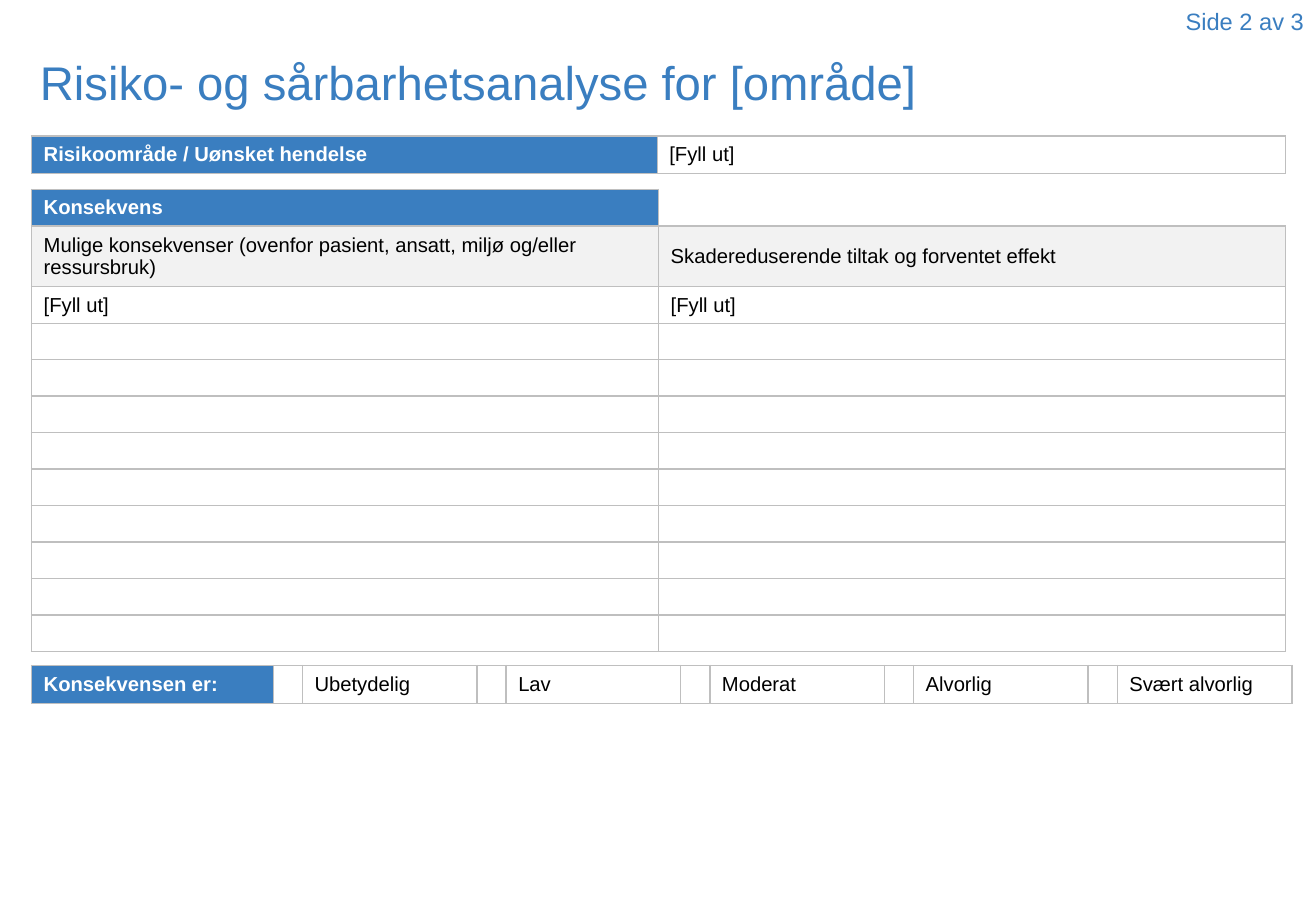
from dataclasses import dataclass

from lxml.etree import SubElement
from pptx import Presentation
from pptx.dml.color import RGBColor as Color
from pptx.enum.text import MSO_ANCHOR as Anchor, PP_ALIGN as Align
from pptx.oxml.ns import qn
from pptx.util import Inches, Pt


@dataclass(frozen=True)
class Theme:
    font: str = "Arial"
    blue: str = "3A7EC0"
    grey: str = "F2F2F2"
    white: str = "FFFFFF"
    black: str = "000000"
    border: str = "BFBFBF"
    border_width: float = 1
    title_size: int = 28
    page_size: int = 14
    table_size: int = 12


class Page:
    """One slide; all lengths are percentages of its width and height."""

    def __init__(self, deck, theme):
        self.deck, self.theme = deck, theme
        self.slide = deck.slides.add_slide(deck.slide_layouts[6])

    def across(self, share):
        return round(self.deck.slide_width * share / 100)

    def down(self, share):
        return round(self.deck.slide_height * share / 100)

    def style(self, frame, size, color, bold=False, align=None):
        for para in frame.paragraphs:
            para.alignment = align
            for span in para.runs:
                span.font.name = self.theme.font
                span.font.size = Pt(size)
                span.font.bold = bold
                span.font.color.rgb = Color.from_string(color)
            if not para.runs:
                # An empty cell keeps the row as low as a line of table text
                para._p.get_or_add_endParaRPr().set("sz", str(size * 100))

    def text(self, words, left, top, width, height, size, anchor, align):
        box = self.slide.shapes.add_textbox(
            self.across(left), self.down(top), self.across(width), self.down(height))
        frame = box.text_frame
        frame.word_wrap = True
        frame.vertical_anchor = anchor
        frame.text = words
        self.style(frame, size, self.theme.blue, align=align)

    def table(self, left, top, widths, heights, rows, fills):
        """Fill the cells row by row; fills maps (row, column) to a colour."""
        grid = self.slide.shapes.add_table(
            len(heights), len(widths), self.across(left), self.down(top),
            self.across(sum(widths)), self.down(sum(heights))).table
        grid.first_row = grid.horz_banding = False
        for column, width in zip(grid.columns, widths):
            column.width = self.across(width)
        for row, height in zip(grid.rows, heights):
            row.height = self.down(height)
        for row, words in enumerate(rows):
            for column, word in enumerate(words):
                self.cell(grid.cell(row, column), word, fills.get((row, column)))
        return grid

    def cell(self, cell, words, fill):
        heading = fill == self.theme.blue
        cell.text_frame.text = words
        cell.vertical_anchor = Anchor.MIDDLE
        self.style(cell.text_frame, self.theme.table_size,
                   self.theme.white if heading else self.theme.black, heading)
        self.borders(cell)
        if fill:
            cell.fill.solid()
            cell.fill.fore_color.rgb = Color.from_string(fill)
        else:
            cell.fill.background()

    def borders(self, cell, sides="LRTB"):
        properties = cell._tc.get_or_add_tcPr()
        for position, side in enumerate("LRTB"):
            for old in properties.findall(qn(f"a:ln{side}")):
                properties.remove(old)
            line = SubElement(properties, qn(f"a:ln{side}"))
            properties.insert(position, line)
            if side in sides:
                line.set("w", str(Pt(self.theme.border_width)))
                solid = SubElement(line, qn("a:solidFill"))
                SubElement(solid, qn("a:srgbClr"), val=self.theme.border)
            else:
                SubElement(line, qn("a:noFill"))


def main():
    deck = Presentation()
    deck.slide_width, deck.slide_height = Inches(10.83), Inches(7.5)
    theme = Theme()
    page = Page(deck, theme)
    left, full_width = 2.4, 95.29
    half = full_width / 2
    single_row, low_row, double_row = 4.13, 3.47, 5.73
    fill_in = "[Fyll ut]"

    # Title
    page.text("Risiko- og sårbarhetsanalyse for [område]", 2.12, 4.93, 95.94, 8.13,
              theme.title_size, Anchor.MIDDLE, Align.LEFT)

    # Risk area
    page.table(left, 14.93, [half - 0.1, half + 0.1], [single_row],
               [["Risikoområde / Uønsket hendelse", fill_in]], {(0, 0): theme.blue})

    # Consequences and measures, with empty rows to fill in
    empty_rows = 9
    rows = [
        ["Konsekvens", ""],
        ["Mulige konsekvenser (ovenfor pasient, ansatt, miljø og/eller\nressursbruk)",
         "Skadereduserende tiltak og forventet effekt"],
        [fill_in, fill_in],
    ] + [["", ""]] * empty_rows
    fills = {(row, 0): theme.white for row in range(2, len(rows))}
    fills.update({(0, 0): theme.blue, (1, 0): theme.grey, (1, 1): theme.grey})
    heights = [low_row, double_row] + [low_row] * (empty_rows + 1)
    consequences = page.table(left, 20.8, [half, half], heights, rows, fills)
    page.borders(consequences.cell(0, 1), "LB")

    # Severity scale: a tick cell before each level
    levels = ["Ubetydelig", "Lav", "Moderat", "Alvorlig", "Svært alvorlig"]
    label_width, tick_width, level_width = 18.37, 2.2, 13.27
    scale = ["Konsekvensen er:"]
    for level in levels:
        scale += ["", level]
    fills = {(0, column): theme.white for column in range(1, len(scale) - 1)}
    fills[0, 0] = theme.blue
    page.table(left, 73.07, [label_width] + [tick_width, level_width] * len(levels),
               [single_row], [scale], fills)

    # Page number
    page.text("Side 2 av 3", 84.86, 0.13, 15.14, 7.6,
              theme.page_size, Anchor.TOP, Align.RIGHT)

    deck.save("out.pptx")


if __name__ == "__main__":
    main()
